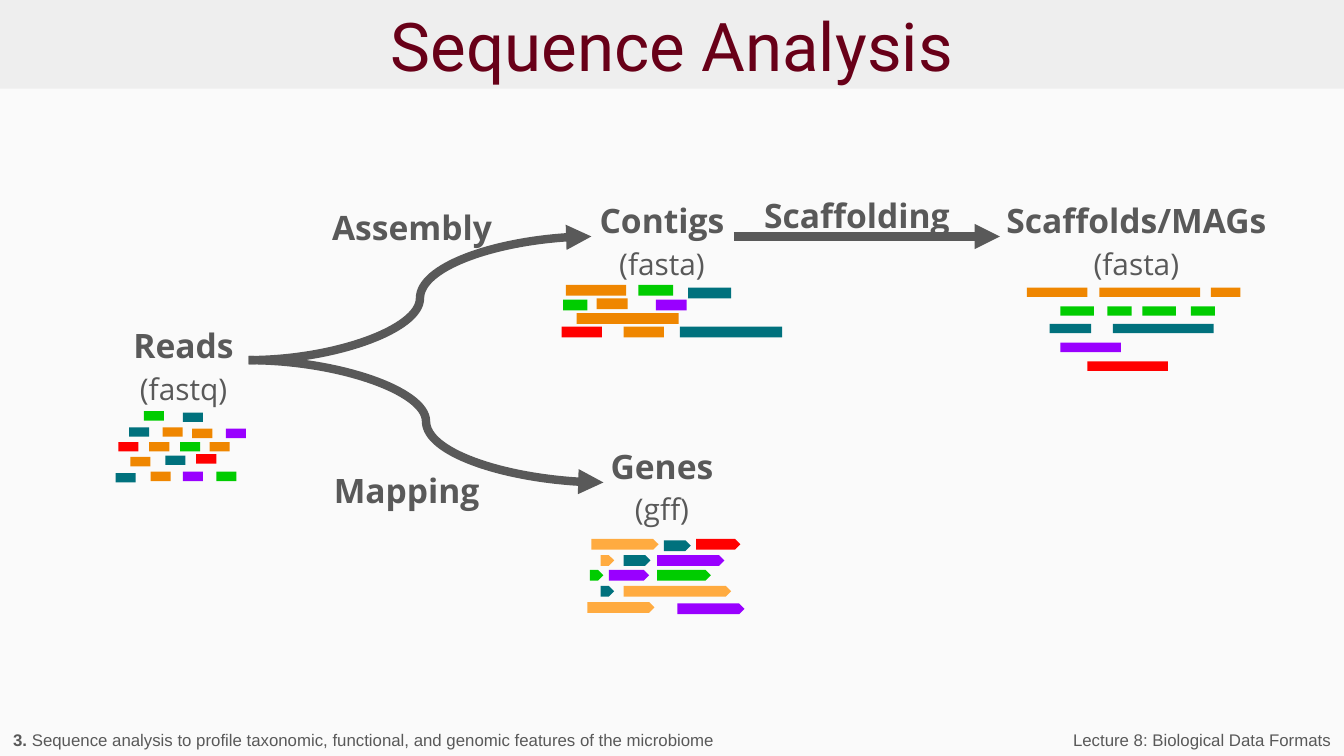
from dataclasses import dataclass

from lxml.etree import SubElement
from pptx import Presentation
from pptx.dml.color import RGBColor
from pptx.enum.shapes import MSO_CONNECTOR, MSO_SHAPE
from pptx.enum.text import MSO_ANCHOR, PP_ALIGN
from pptx.oxml.ns import qn
from pptx.slide import Slide
from pptx.text.text import Font, TextFrame
from pptx.util import Inches, Pt

COLORS = {
    "background": "FAFAFA",
    "banner": "EEEEEE",
    "maroon": "680018",
    "gray": "595959",
    "red": "FF0000",
    "purple": "9900FF",
    "teal": "00717D",
    "green": "00CC00",
    "orange": "EF8600",
    "amber": "FFAB40",
}


@dataclass
class Label:
    left: float
    top: float
    name: str
    file_format: str = ""
    width: float = 1.79


@dataclass
class Arrow:
    kind: MSO_CONNECTOR
    start: tuple[float, float]
    end: tuple[float, float]


@dataclass
class Fragment:
    color: str
    left: float
    top: float
    width: float


@dataclass
class FragmentSet:
    kind: MSO_SHAPE
    height: float
    fragments: list[Fragment]


SLIDE_WIDTH = 10
SLIDE_HEIGHT = SLIDE_WIDTH * 9 / 16

READ_WIDTH = 0.15
READS = {
    "green": [(1.07, 3.06), (1.34, 3.29), (1.61, 3.51)],
    "teal": [(1.36, 3.07), (0.96, 3.18), (1.23, 3.39), (0.86, 3.52)],
    "orange": [(1.21, 3.18), (1.43, 3.19), (1.11, 3.29), (1.56, 3.29),
               (0.97, 3.4), (1.12, 3.51)],
    "purple": [(1.68, 3.19), (1.36, 3.51)],
    "red": [(0.88, 3.29), (1.46, 3.38)],
}

FRAGMENT_SETS = [
    FragmentSet(MSO_SHAPE.RECTANGLE, 0.08, [
        Fragment("red", 4.18, 2.43, 0.3),
        Fragment("purple", 4.88, 2.23, 0.23),
        Fragment("teal", 5.12, 2.14, 0.32),
        Fragment("teal", 5.06, 2.43, 0.76),
        Fragment("green", 4.75, 2.12, 0.26),
        Fragment("green", 4.19, 2.23, 0.18),
        Fragment("orange", 4.21, 2.12, 0.45),
        Fragment("orange", 4.64, 2.43, 0.3),
        Fragment("orange", 4.44, 2.22, 0.23),
        Fragment("orange", 4.29, 2.33, 0.76),
    ]),
    FragmentSet(MSO_SHAPE.RECTANGLE, 0.07, [
        Fragment("red", 8.09, 2.69, 0.6),
        Fragment("purple", 7.89, 2.55, 0.45),
        Fragment("teal", 7.81, 2.41, 0.31),
        Fragment("teal", 8.28, 2.41, 0.75),
        Fragment("orange", 7.64, 2.14, 0.45),
        Fragment("orange", 9.01, 2.14, 0.22),
        Fragment("orange", 8.18, 2.14, 0.75),
        Fragment("green", 7.89, 2.28, 0.25),
        Fragment("green", 8.24, 2.28, 0.18),
        Fragment("green", 8.5, 2.28, 0.25),
        Fragment("green", 8.86, 2.28, 0.18),
    ]),
    FragmentSet(MSO_SHAPE.RECTANGLE, 0.07, [
        Fragment(color, left, top, READ_WIDTH)
        for color, places in READS.items()
        for left, top in places
    ]),
    FragmentSet(MSO_SHAPE.PENTAGON, 0.08, [
        Fragment("amber", 4.4, 4.01, 0.5),
        Fragment("teal", 4.64, 4.13, 0.2),
        Fragment("green", 4.39, 4.24, 0.1),
        Fragment("amber", 4.64, 4.36, 0.8),
        Fragment("purple", 4.89, 4.13, 0.5),
        Fragment("purple", 4.53, 4.24, 0.3),
        Fragment("green", 4.89, 4.24, 0.4),
        Fragment("purple", 5.04, 4.49, 0.5),
        Fragment("teal", 4.47, 4.36, 0.1),
        Fragment("teal", 4.94, 4.02, 0.2),
        Fragment("amber", 4.37, 4.48, 0.5),
        Fragment("red", 5.18, 4.01, 0.33),
        Fragment("amber", 4.47, 4.13, 0.1),
    ]),
]

FORK = (1.85, 2.68)
ARROWS = [
    Arrow(MSO_CONNECTOR.CURVE, FORK, (4.49, 3.59)),
    Arrow(MSO_CONNECTOR.CURVE, FORK, (4.4, 1.76)),
    Arrow(MSO_CONNECTOR.STRAIGHT, (5.46, 1.76), (7.44, 1.76)),
]

LABELS = [
    Label(2.11, 3.33, "Mapping"),
    Label(2.15, 1.37, "Assembly"),
    Label(5.46, 1.28, "Scaffolding"),
    Label(4.01, 1.47, "Contigs", "(fasta)"),
    Label(4.01, 3.3, "Genes", "(gff)"),
    Label(0.45, 2.4, "Reads", "(fastq)"),
    Label(7.32, 1.47, "Scaffolds/MAGs", "(fasta)", 2.23),
]


def rgb(color: str) -> RGBColor:
    return RGBColor.from_string(COLORS[color])


def style_font(font: Font, name: str, size: float, color: str = "gray", bold: bool = False) -> None:
    font.name, font.size, font.bold = name, Pt(size), bold
    font.color.rgb = rgb(color)


def set_frame(frame: TextFrame, anchor: MSO_ANCHOR, left: float = 0.1, vertical: float = 0.1) -> None:
    frame.word_wrap = True
    frame.vertical_anchor = anchor
    frame.margin_left, frame.margin_right = Inches(left), Inches(0.1)
    frame.margin_top = frame.margin_bottom = Inches(vertical)


def draw_block(page: Slide, kind: MSO_SHAPE, block: Fragment, height: float) -> TextFrame:
    shape = page.shapes.add_shape(
        kind, Inches(block.left), Inches(block.top), Inches(block.width), Inches(height))
    shape.shadow.inherit = False
    shape.fill.solid()
    shape.fill.fore_color.rgb = rgb(block.color)
    shape.line.fill.background()
    return shape.text_frame


def draw_title(page: Slide, text: str) -> None:
    frame = draw_block(page, MSO_SHAPE.RECTANGLE, Fragment("banner", 0, 0, SLIDE_WIDTH), 0.66)
    set_frame(frame, MSO_ANCHOR.MIDDLE)
    frame.text = text
    para = frame.paragraphs[0]
    para.alignment = PP_ALIGN.CENTER
    style_font(para.runs[0].font, "Roboto", 36, "maroon")


def draw_footer(page: Slide, left: float, width: float, align: PP_ALIGN, text: str, number: str = "") -> None:
    box = page.shapes.add_textbox(Inches(left), Inches(5.38), Inches(width), Inches(0.25))
    set_frame(box.text_frame, MSO_ANCHOR.BOTTOM, vertical=0.05)
    para = box.text_frame.paragraphs[0]
    para.alignment = align
    for words, bold in ((number, True), (text, False)):
        if words:
            span = para.add_run()
            span.text = words
            style_font(span.font, "Arial", 9, bold=bold)


def draw_label(page: Slide, label: Label) -> None:
    box = page.shapes.add_textbox(
        Inches(label.left), Inches(label.top), Inches(label.width), Inches(0.59))
    frame = box.text_frame
    set_frame(frame, MSO_ANCHOR.MIDDLE, left=0.14)
    frame.text = "\n".join(filter(None, (label.name, label.file_format)))
    for para, size, bold in zip(frame.paragraphs, (18, 16), (True, False)):
        para.alignment = PP_ALIGN.CENTER
        para.line_spacing = 1.15
        style_font(para.runs[0].font, "Open Sans", size, bold=bold)


def draw_arrow(page: Slide, arrow: Arrow) -> None:
    ends = [Inches(value) for value in arrow.start + arrow.end]
    connector = page.shapes.add_connector(arrow.kind, *ends)
    connector.line.color.rgb = rgb("gray")
    connector.line.width = Pt(4.5)
    properties = connector.element.spPr
    SubElement(properties.find(qn("a:ln")), qn("a:tailEnd"), type="triangle")
    SubElement(properties, qn("a:effectLst"))


def main() -> None:
    deck = Presentation()
    deck.slide_width, deck.slide_height = Inches(SLIDE_WIDTH), Inches(SLIDE_HEIGHT)
    page = deck.slides.add_slide(deck.slide_layouts[6])
    page.background.fill.solid()
    page.background.fill.fore_color.rgb = rgb("background")
    draw_title(page, "Sequence Analysis")
    draw_footer(page, 0, 5.5, PP_ALIGN.LEFT,
                "Sequence analysis to profile taxonomic, functional, and genomic features of the microbiome", "3. ")
    draw_footer(page, 6.17, 3.83, PP_ALIGN.RIGHT, "Lecture 8: Biological Data Formats")
    for arrow in ARROWS:
        draw_arrow(page, arrow)
    for label in LABELS:
        draw_label(page, label)
    for group in FRAGMENT_SETS:
        for fragment in group.fragments:
            draw_block(page, group.kind, fragment, group.height)
    deck.save("out.pptx")


if __name__ == "__main__":
    main()
